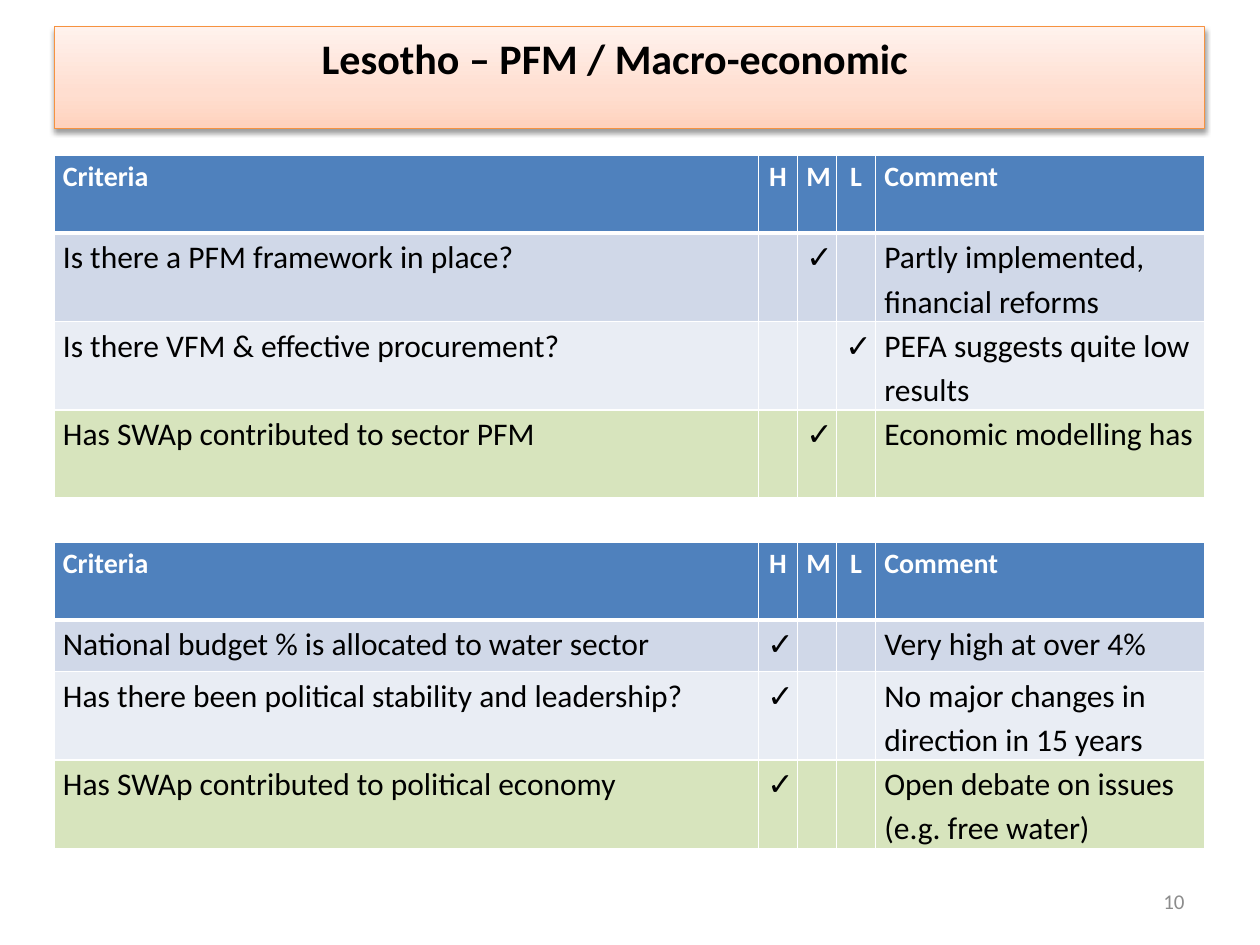
from lxml import etree
from pptx import Presentation
from pptx.dml.color import RGBColor
from pptx.enum.text import MSO_ANCHOR, MSO_AUTO_SIZE, PP_ALIGN
from pptx.oxml import parse_xml
from pptx.oxml.ns import qn
from pptx.util import Inches, Pt

TOP, MIDDLE = MSO_ANCHOR.TOP, MSO_ANCHOR.MIDDLE
LEFT, CENTER, RIGHT = PP_ALIGN.LEFT, PP_ALIGN.CENTER, PP_ALIGN.RIGHT
FIXED = MSO_AUTO_SIZE.NONE
NS = 'xmlns:a="http://schemas.openxmlformats.org/drawingml/2006/main"'

WIDTH, HEIGHT = 10, 7.5
EDGE, SPAN = 0.43, 9.13
COLS = [5.59, 0.31, 0.31, 0.31, 2.61]
HEADS = ["Criteria", "H", "M", "L", "Comment"]
HEAD, LINE, PAIR = 0.62, 0.41, 0.7
BLUE, WHITE, BLACK = "4F81BD", "FFFFFF", "000000"
BANDS = ["D0D8E8", "E9EDF4", "D7E4BD"]
BLEND = [(0, "FFD2BD"), (35, "FFDED0"), (100, "FFF2ED")]

FINANCE = [
    ("Is there a PFM framework in place?", "M",
     "Partly implemented, financial reforms", PAIR),
    ("Is there VFM & effective procurement?", "L",
     "PEFA suggests quite low results", PAIR),
    ("Has SWAp contributed to sector PFM", "M",
     "Economic modelling has", PAIR),
]
POLICY = [
    ("National budget % is allocated to water sector", "H",
     "Very high at over 4%", LINE),
    ("Has there been political stability and leadership?", "H",
     "No major changes in direction in 15 years", PAIR),
    ("Has SWAp contributed to political economy", "H",
     "Open debate on issues (e.g. free water)", PAIR),
]


def color(code):
    return RGBColor.from_string(code)


def write(para, text, size, code, bold=False, align=LEFT):
    para.alignment = align
    run = para.add_run()
    run.text = text
    font = run.font
    font.name, font.size, font.bold = "Calibri", Pt(size), bold
    font.color.rgb = color(code)


def place(shape, left, top, width, height):
    shape.left, shape.top = Inches(left), Inches(top)
    shape.width, shape.height = Inches(width), Inches(height)


def add_title(slide, text):
    title = slide.shapes.title
    place(title, EDGE, 0.21, SPAN, 0.81)
    stops = "".join(
        f'<a:gs pos="{pos * 1000}"><a:srgbClr val="{code}"/></a:gs>'
        for pos, code in BLEND)
    props = title.element.spPr
    props.append(parse_xml(
        f'<a:gradFill {NS} rotWithShape="1"><a:gsLst>{stops}</a:gsLst>'
        '<a:lin ang="16200000" scaled="0"/></a:gradFill>'))
    title.line.color.rgb = color("F69240")
    title.line.width = Pt(0.75)
    props.append(parse_xml(
        f'<a:effectLst {NS}><a:outerShdw blurRad="{Pt(3.1)}" '
        f'dist="{Pt(1.6)}" dir="5400000" rotWithShape="0">'
        '<a:srgbClr val="000000"><a:alpha val="38000"/></a:srgbClr>'
        '</a:outerShdw></a:effectLst>'))
    frame = title.text_frame
    frame.auto_size, frame.vertical_anchor = FIXED, TOP
    frame.margin_right = Inches(0.33)
    write(frame.paragraphs[0], text, 24, BLACK, True, CENTER)


def set_edge(cell, side, width):
    props = cell._tc.get_or_add_tcPr()
    line = etree.SubElement(props, qn(f"a:ln{side}"), w=str(Pt(width)))
    fill = etree.SubElement(line, qn("a:solidFill"))
    etree.SubElement(fill, qn("a:srgbClr"), val=WHITE)


def fill_cell(cell, text, row, col):
    head = row == 0
    cell.margin_left = cell.margin_right = Inches(0.07)
    cell.margin_top = cell.margin_bottom = 0
    for side in "LRTB":
        thick = (row, side) in [(0, "B"), (1, "T")]
        set_edge(cell, side, 3 if thick else 1)
    cell.fill.solid()
    cell.fill.fore_color.rgb = color(BLUE if head else BANDS[row - 1])
    para = cell.text_frame.paragraphs[0]
    para.line_spacing = 1.15
    if col == 0:
        props = para._p.get_or_add_pPr()
        props.set("marL", str(Inches(0.38)))
        props.set("indent", str(-Inches(0.38)))
    if text:
        align = CENTER if head and 0 < col < 4 else LEFT
        write(para, text, 16 if head else 18,
              WHITE if head else BLACK, head, align)


def add_grid(slide, top, items):
    tall = [HEAD] + [item[3] for item in items]
    rows = [HEADS]
    for ask, mark, note, _ in items:
        ticks = ["✓" if name == mark else "" for name in HEADS[1:4]]
        rows.append([ask, *ticks, note])
    table = slide.shapes.add_table(
        len(rows), len(COLS), Inches(EDGE), Inches(top),
        Inches(SPAN), Inches(sum(tall))).table
    for col, width in enumerate(COLS):
        table.columns[col].width = Inches(width)
    for row, texts in enumerate(rows):
        table.rows[row].height = Inches(tall[row])
        for col, text in enumerate(texts):
            fill_cell(table.cell(row, col), text, row, col)


def add_number(slide, text):
    box = slide.shapes.add_textbox(
        Inches(7.17), Inches(6.95), Inches(2.33), Inches(0.4))
    frame = box.text_frame
    frame.word_wrap, frame.vertical_anchor = True, MIDDLE
    write(frame.paragraphs[0], text, 12, "8C8C8C", align=RIGHT)


def main():
    deck = Presentation()
    deck.slide_width, deck.slide_height = Inches(WIDTH), Inches(HEIGHT)
    slide = deck.slides.add_slide(deck.slide_layouts[5])
    add_title(slide, "Lesotho – PFM / Macro-economic")
    add_grid(slide, 1.23, FINANCE)
    add_grid(slide, 4.3, POLICY)
    add_number(slide, "10")
    deck.save("out.pptx")


if __name__ == "__main__":
    main()
